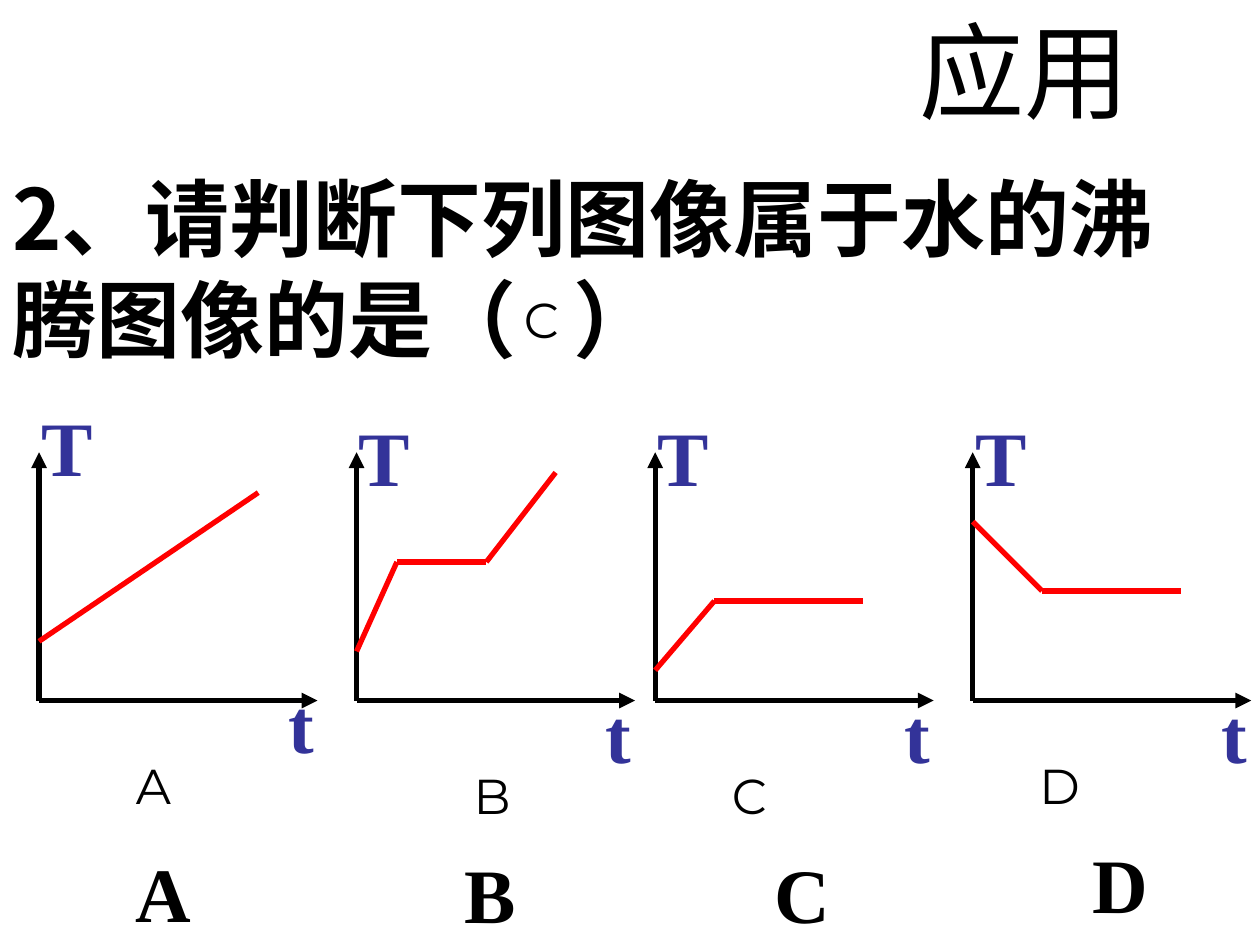
from dataclasses import dataclass
from itertools import pairwise

from lxml import etree
from pptx import Presentation
from pptx import util as u
from pptx.dml.color import RGBColor
from pptx.enum import shapes, text
from pptx.oxml import ns

SERIF, SANS, CJK = "Times New Roman", "Montserrat", "Noto Sans CJK JP"
BLACK, RED, BLUE, WHITE = "000000", "FF0000", "333399", "FFFFFF"
AXIS_Y, AXIS_TOP, AXIS_LENGTH = 5.56, 3.59, 2.21

Point = tuple[float, float]
Box = tuple[float, float, float, float]


@dataclass
class Style:
    font: str
    size: float
    color: str = BLACK
    bold: bool = False


@dataclass
class Graph:
    x: float
    label_top: float
    curve: list[Point]


@dataclass
class Label:
    words: str
    box: Box
    style: Style


AXIS_NAME = Style(SERIF, 44, BLUE, True)
OPTION = Style(SERIF, 44, BLACK, True)
CAPTION = Style(SANS, 28)
HEADING = Style(SANS, 60)
QUESTION = Style(CJK, 48, BLACK, True)

GRAPHS = [
    Graph(0.31, 3.12, [(0.31, 5.09), (2.05, 3.91)]),
    Graph(2.83, 3.2, [(2.83, 5.17), (3.15, 4.46), (3.86, 4.46), (4.41, 3.75)]),
    Graph(5.2, 3.2, [(5.2, 5.32), (5.67, 4.77), (6.85, 4.77)]),
    Graph(7.72, 3.2, [(7.72, 4.14), (8.27, 4.69), (9.37, 4.69)]),
]
OPTIONS = [
    Label("A", (0.98, 6.66, 0.64, 0.83), OPTION),
    Label("B", (3.59, 6.67, 0.61, 0.83), OPTION),
    Label("C", (6.05, 6.67, 0.64, 0.83), OPTION),
    Label("D", (8.57, 6.59, 0.64, 0.83), OPTION),
]
CAPTIONS = [
    Label("B", (3.66, 6.03, 1.02, 0.57), CAPTION),
    Label("A", (0.98, 5.95, 1.02, 0.57), CAPTION),
    Label("C", (5.71, 6.03, 1.26, 0.57), CAPTION),
    Label("D", (8.15, 5.95, 1.18, 0.57), CAPTION),
    Label("C", (4.06, 2.25, 0.63, 0.57), CAPTION),
]


def rgb(value: str) -> RGBColor:
    return RGBColor.from_string(value)


def inches(values) -> list[int]:
    return [u.Inches(v) for v in values]


def apply(target, values: dict) -> None:
    for name, value in values.items():
        setattr(target, name, value)


def add_run(p, words: str, style: Style):
    r = p.add_run()
    r.text = words
    apply(r.font, {"name": style.font, "size": u.Pt(style.size), "bold": style.bold})
    r.font.color.rgb = rgb(style.color)
    ea = etree.SubElement(r.font._element, ns.qn("a:ea"))
    ea.set("typeface", style.font)
    return r


def add_label(parent, label: Label, wrap: bool) -> None:
    tf = parent.add_textbox(*inches(label.box)).text_frame
    tf.word_wrap = wrap
    add_run(tf.paragraphs[0], label.words, label.style)


def add_line(parent, start: Point, end: Point, color: str, arrow: bool = False) -> None:
    c = parent.add_connector(shapes.MSO_CONNECTOR.STRAIGHT, *inches(start + end))
    c.line.width = u.Pt(3)
    c.line.color.rgb = rgb(color)
    if arrow:
        tail = etree.SubElement(c.line._get_or_add_ln(), ns.qn("a:tailEnd"))
        tail.set("type", "triangle")
    etree.SubElement(c._element.spPr, ns.qn("a:effectLst"))


def add_graph(parent, graph: Graph) -> None:
    origin = (graph.x, AXIS_Y)
    add_line(parent, origin, (graph.x, AXIS_TOP), BLACK, True)
    add_line(parent, origin, (graph.x + AXIS_LENGTH, AXIS_Y), BLACK, True)
    for start, end in pairwise(graph.curve):
        add_line(parent, start, end, RED)
    top = graph.label_top
    add_label(parent, Label("T", (graph.x - 0.08, top, 0.61, 0.83), AXIS_NAME), False)
    add_label(parent, Label("t", (graph.x + 1.88, top + 2.2, 0.4, 0.83), AXIS_NAME), False)


def add_heading(s) -> None:
    sp = s.shapes.title
    apply(sp, dict(zip(("left", "top", "width", "height"), inches((7.2, 0, 2.48, 1.1)))))
    tf = sp.text_frame
    apply(tf, {"vertical_anchor": text.MSO_ANCHOR.TOP,
               "auto_size": text.MSO_AUTO_SIZE.NONE, "word_wrap": True})
    p = tf.paragraphs[0]
    p.alignment = text.PP_ALIGN.LEFT
    add_run(p, "应用", HEADING)


def add_question(s) -> None:
    sp = s.shapes.add_shape(shapes.MSO_SHAPE.RECTANGLE, *inches((0, 1.23, 9.8, 1.7)))
    sp.shadow.inherit = False
    sp.fill.solid()
    sp.fill.fore_color.rgb = rgb(WHITE)
    sp.line.fill.background()
    tf = sp.text_frame
    apply(tf, {"vertical_anchor": text.MSO_ANCHOR.TOP, "word_wrap": True,
               "margin_top": u.Inches(0.09), "margin_bottom": 0})
    p = tf.paragraphs[0]
    apply(p, {"alignment": text.PP_ALIGN.LEFT, "line_spacing": u.Pt(57.6)})
    add_run(p, "2、请判断下列图像属于水的沸腾图像的是（", QUESTION)
    gap = add_run(p, " ", QUESTION)
    gap.font._element.set("spc", "2150")
    add_run(p, "）", QUESTION)


def main() -> None:
    prs = Presentation()
    apply(prs, {"slide_width": u.Inches(10), "slide_height": u.Inches(7.5)})
    s = prs.slides.add_slide(prs.slide_layouts[5])
    add_heading(s)
    add_question(s)
    graphs = s.shapes.add_group_shape().shapes
    for graph in GRAPHS:
        add_graph(graphs, graph)
    options = s.shapes.add_group_shape().shapes
    for label in OPTIONS:
        add_label(options, label, False)
    for label in CAPTIONS:
        add_label(s.shapes, label, True)
    prs.save("out.pptx")


if __name__ == "__main__":
    main()
